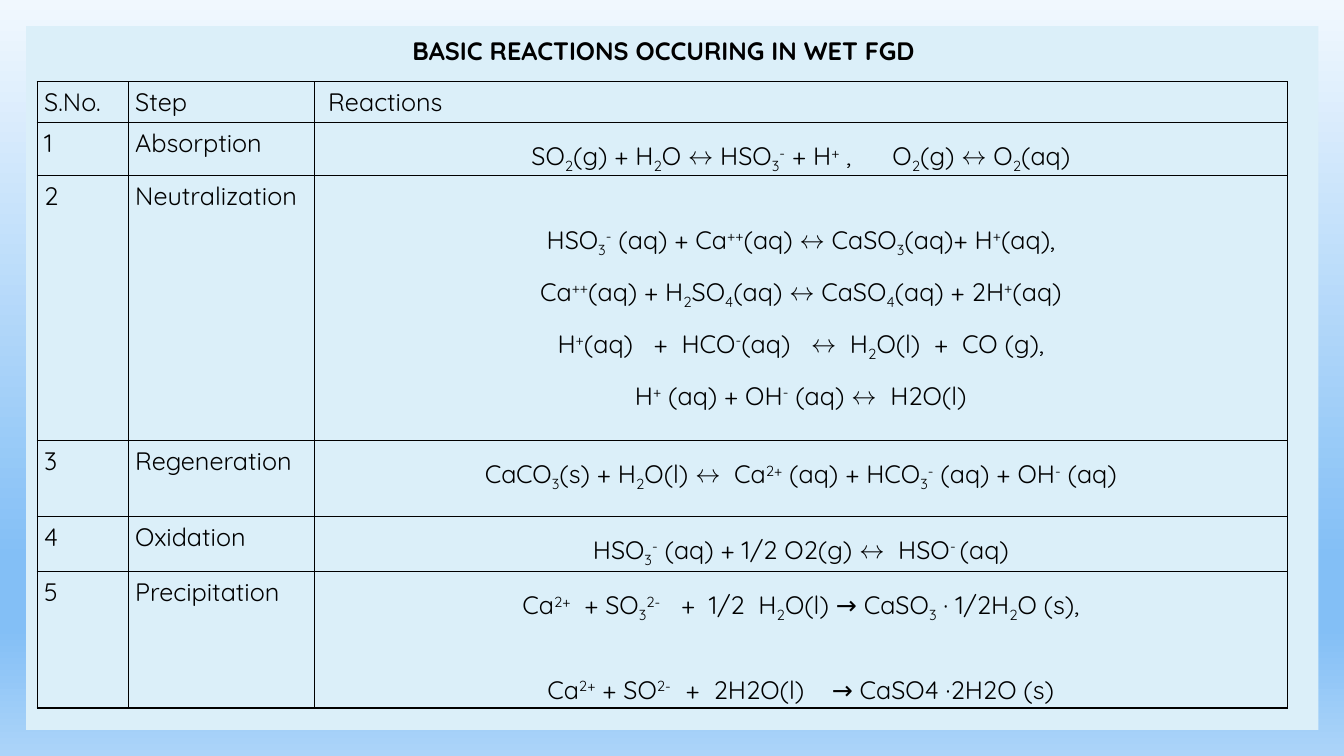
from lxml import etree
from pptx import Presentation
from pptx.dml.color import RGBColor
from pptx.enum.shapes import MSO_SHAPE
from pptx.enum.text import MSO_ANCHOR, PP_ALIGN
from pptx.oxml.ns import qn
from pptx.util import Pt

RECTANGLE = MSO_SHAPE.RECTANGLE
TOP = MSO_ANCHOR.TOP
LEFT, CENTER, JUSTIFY = PP_ALIGN.LEFT, PP_ALIGN.CENTER, PP_ALIGN.JUSTIFY

FONT = "Quicksand"
COLORS = {
    "ink": "000000",
    "panel": "DBEFF9",
    "sky_top": "F1F8FE",
    "sky_deep": "83BFF6",
    "sky_base": "ACD4F9",
}
SKY_STOPS = [(0, "sky_top"), (74, "sky_deep"), (83, "sky_deep"), (100, "sky_base")]
BASELINES = {"_": "-25000", "^": "30000"}

COLUMN_WIDTHS = [65, 133, 695]
HEADER = ["S.No.", "Step", " Reactions"]
HEADER_HEIGHT = 29.5

# Spans are parted by "|"; "_" opens a subscript and "^" a superscript.
STEPS = [
    ("Absorption", 36, [
        ("SO|_2|(g) + H|_2|O ↔ HSO|_3|^-| + H|^+| ,      O|_2|(g) ↔ O|_2|(aq)", 0),
    ]),
    ("Neutralization", 189.4, [
        ("HSO|_3|^-| (aq) + Ca|^++|(aq) ↔ CaSO|_3|(aq)+ H|^+|(aq),", -10),
        ("Ca|^++|(aq) + H|_2|SO|_4|(aq) ↔ CaSO|_4|(aq) + 2H|^+|(aq)", 0),
        ("H|^+|(aq)   +  HCO|^-|(aq)   ↔  H|_2|O(l)  +  CO (g),", -44),
        ("H|^+| (aq) + OH|^-| (aq) ↔  H2O(l)", 0),
    ]),
    ("Regeneration", 54, [
        ("CaCO|_3|(s) + H|_2|O(l) ↔  Ca|^2+| (aq) + HCO|_3|^-| (aq) + OH|^-| (aq)", 0),
    ]),
    ("Oxidation", 39.6, [
        ("HSO|_3|^-| (aq) + 1/2 O2(g) ↔  HSO|^- |(aq)", 0),
    ]),
    ("Precipitation", 97.2, [
        ("Ca|^2+|  + SO|_3|^2-|   +  1/2  H|_2|O(l) → CaSO|_3| · 1/2H|_2|O (s),", -5),
        ("Ca|^2+| + SO|^2-  | +  2H2O(l)    → CaSO4 ·2H2O (s)", 0),
    ]),
]


def color(name):
    return RGBColor.from_string(COLORS[name])


def set_font(font, bold=False):
    font.name = FONT
    font.size = Pt(18)
    font.bold = bold
    font.color.rgb = color("ink")


def paint_sky(page):
    fill = page.background.fill
    fill.gradient()
    fill.gradient_angle = 270
    stops = page.background._cSld.find(".//" + qn("a:gsLst"))
    for stop in list(stops):
        stops.remove(stop)
    for percent, name in SKY_STOPS:
        stop = etree.SubElement(stops, qn("a:gs"), pos=str(percent * 1000))
        etree.SubElement(stop, qn("a:srgbClr"), val=COLORS[name])


def add_panel(page):
    panel = page.shapes.add_shape(RECTANGLE, Pt(18.7), Pt(18.7), Pt(923), Pt(502.6))
    panel.shadow.inherit = False
    panel.fill.solid()
    panel.fill.fore_color.rgb = color("panel")
    panel.line.fill.background()


def place_title(page, text):
    title = page.shapes.title
    title.left, title.top, title.width, title.height = Pt(287.3), Pt(21.6), Pt(437), Pt(28.8)
    frame = title.text_frame
    frame.text = text
    frame.vertical_anchor = TOP
    para = frame.paragraphs[0]
    para.alignment = LEFT
    set_font(para.font, bold=True)


def draw_borders(cell):
    properties = cell._tc.get_or_add_tcPr()
    for position, side in enumerate(("a:lnL", "a:lnR", "a:lnT", "a:lnB")):
        line = etree.Element(qn(side), w=str(Pt(1)))
        fill = etree.SubElement(line, qn("a:solidFill"))
        etree.SubElement(fill, qn("a:srgbClr"), val=COLORS["ink"])
        properties.insert(position, line)


def format_cell(cell):
    cell.margin_left = cell.margin_right = Pt(5)
    cell.margin_top = cell.margin_bottom = 0
    cell.fill.background()
    draw_borders(cell)


def write_label(cell, text):
    para = cell.text_frame.paragraphs[0]
    para.text = text
    para.alignment = JUSTIFY
    para.line_spacing = 1.15
    para.space_after = Pt(12)
    set_font(para.font)


def write_formula(para, formula):
    for piece in formula.split("|"):
        span = para.add_run()
        span.text = piece.lstrip("_^")
        set_font(span.font)
        if piece[0] in BASELINES:
            span.font._element.set("baseline", BASELINES[piece[0]])


def write_reactions(cell, reactions):
    dense = len(reactions) > 2
    if dense:
        cell.margin_top = Pt(34.5)
    frame = cell.text_frame
    for number, (formula, indent) in enumerate(reactions):
        para = frame.add_paragraph() if number else frame.paragraphs[0]
        para.alignment = CENTER
        para.line_spacing = 1.0 if dense else 1.5
        para.space_before = para.space_after = Pt(6 if dense else 12)
        if indent:
            properties = para._p.get_or_add_pPr()
            properties.set("marL", "0")
            properties.set("indent", str(Pt(indent)))
        write_formula(para, formula)


def add_reaction_table(page):
    heights = [HEADER_HEIGHT] + [height for _, height, _ in STEPS]
    frame = page.shapes.add_table(
        len(heights), len(COLUMN_WIDTHS), Pt(26.6), Pt(58.3),
        Pt(sum(COLUMN_WIDTHS)), Pt(sum(heights)))
    table = frame.table
    table.first_row = table.horz_banding = False
    for column, width in zip(table.columns, COLUMN_WIDTHS):
        column.width = Pt(width)
    for row, height in zip(table.rows, heights):
        row.height = Pt(height)
    for cell in table.iter_cells():
        format_cell(cell)
    for column, heading in enumerate(HEADER):
        write_label(table.cell(0, column), heading)
    for number, (step, _, reactions) in enumerate(STEPS, start=1):
        write_label(table.cell(number, 0), str(number))
        write_label(table.cell(number, 1), step)
        write_reactions(table.cell(number, 2), reactions)


def main():
    deck = Presentation()
    deck.slide_width, deck.slide_height = Pt(960), Pt(540)
    page = deck.slides.add_slide(deck.slide_layouts[5])
    paint_sky(page)
    add_panel(page)
    add_reaction_table(page)
    place_title(page, "BASIC REACTIONS OCCURING IN WET FGD")
    page.shapes._spTree.append(page.shapes.title._element)
    deck.save("out.pptx")


if __name__ == "__main__":
    main()
